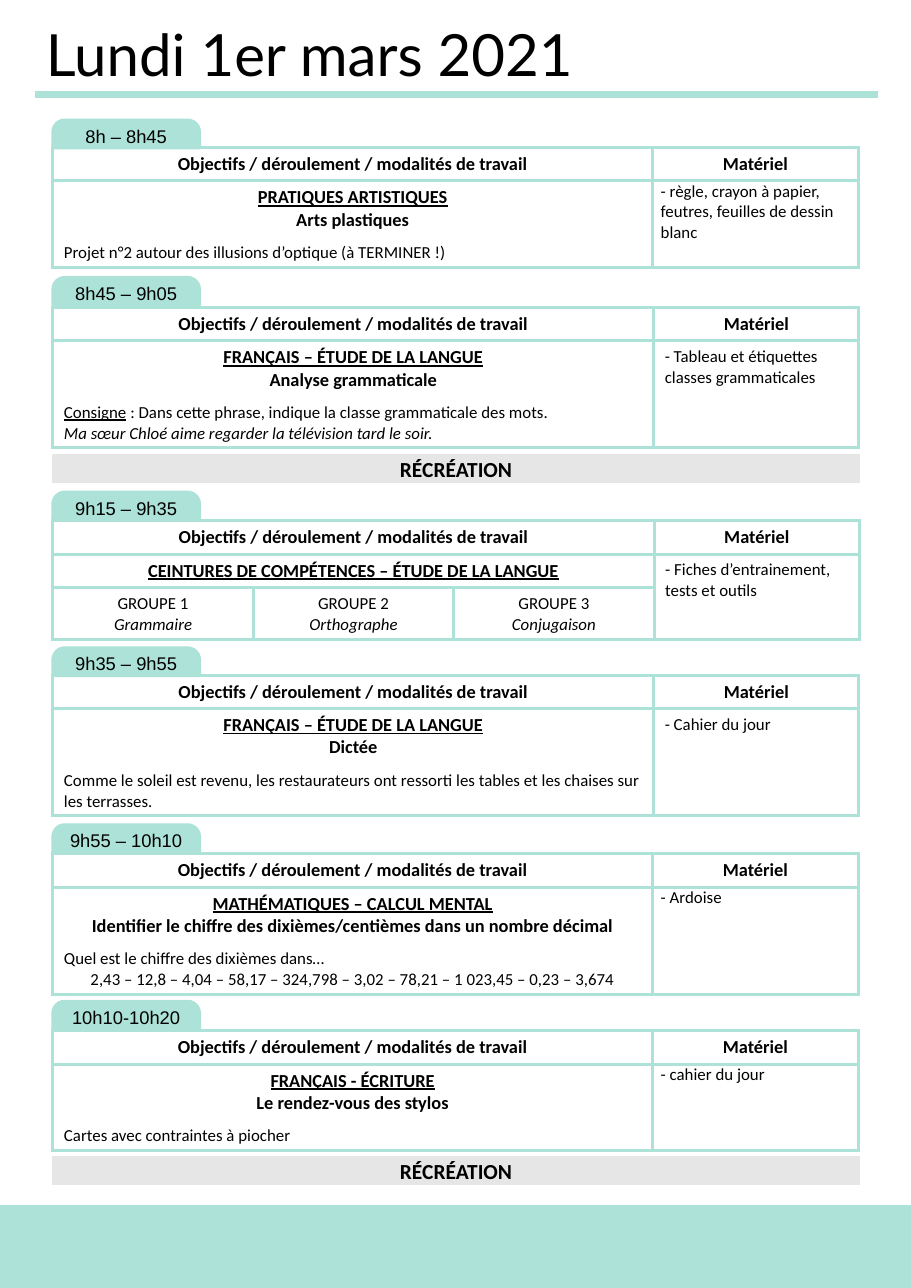
import collections
import pptx
import pptx.util
import pptx.oxml
import pptx.oxml.ns
import pptx.dml.color
import pptx.enum.shapes
import pptx.enum.text

Cm, Pt = pptx.util.Cm, pptx.util.Pt
SHAPE = pptx.enum.shapes.MSO_SHAPE
ANCHOR = pptx.enum.text.MSO_ANCHOR
ALIGN = pptx.enum.text.PP_ALIGN
COLORS = {"mint": "ACE2D7", "gray": "E7E6E6", "white": "FFFFFF", "black": "000000"}
LEFT, WIDTH = 1.22, 18.59
HEAD = 0.77

# marks: b bold, u underlined, i italic, c centred; tail is a plain second run
Line = collections.namedtuple("Line", "text marks size gap tail", defaults=("", 11, 0, ""))


def tint(name):
    return pptx.dml.color.RGBColor.from_string(COLORS[name])


class Page:
    def __init__(self, deck):
        self.font = "Calibri"
        self.slide = deck.slides.add_slide(deck.slide_layouts[6])
        self.shapes = self.slide.shapes

    def label(self, frame, lines, font=None):
        for index, line in enumerate(lines):
            para = frame.paragraphs[0] if index == 0 else frame.add_paragraph()
            para.text = line.text
            para.alignment = ALIGN.CENTER if "c" in line.marks else ALIGN.LEFT
            para.space_before = Pt(line.gap)
            if line.tail:
                para.add_run().text = line.tail
            for run, marks in zip(para.runs, (line.marks, "")):
                run.font.name = font or self.font
                run.font.size = Pt(line.size)
                run.font.color.rgb = tint("black")
                run.font.bold = "b" in marks
                run.font.italic = "i" in marks
                run.font.underline = "u" in marks

    def title(self, text):
        box = self.shapes.add_textbox(Cm(0.81), Cm(0.3), Cm(15.9), Cm(1.88))
        box.text_frame.word_wrap = True
        self.label(box.text_frame, [Line(text, size=38)], "Lato")

    def rule(self, start, end, top):
        line = self.shapes.add_connector(
            pptx.enum.shapes.MSO_CONNECTOR.STRAIGHT, Cm(start), Cm(top), Cm(end), Cm(top))
        line.line.color.rgb = tint("mint")
        line.line.width = Pt(4.75)
        props = line._element.spPr
        props.append(props.makeelement(pptx.oxml.ns.qn("a:effectLst"), {}))

    def block(self, kind, left, top, width, height, color, edge=1):
        shape = self.shapes.add_shape(kind, Cm(left), Cm(top), Cm(width), Cm(height))
        shape.shadow.inherit = False
        shape.fill.solid()
        shape.fill.fore_color.rgb = tint(color)
        shape.line.color.rgb = tint(color)
        shape.line.width = Pt(edge)
        shape.text_frame.vertical_anchor = ANCHOR.MIDDLE
        return shape

    def tab(self, top, hours):
        shape = self.block(SHAPE.ROUND_2_SAME_RECTANGLE, LEFT, top, 3.38, 0.64, "mint", 2)
        shape.adjustments[0] = 0.428
        shape.adjustments[1] = 0
        self.label(shape.text_frame, [Line(hours, "c", 12)], "Arial")

    def recess(self, top):
        shape = self.block(SHAPE.RECTANGLE, LEFT, top, WIDTH, 0.64, "gray")
        self.label(shape.text_frame, [Line("RÉCRÉATION", "bc", 14)])

    def grid(self, top, widths, heights):
        """Add a white table with mint borders and a header row."""
        frame = self.shapes.add_table(
            len(heights), len(widths), Cm(LEFT), Cm(top), Cm(sum(widths)), Cm(sum(heights)))
        table = frame.table
        table.first_row = table.horz_banding = False
        for column, width in zip(table.columns, widths):
            column.width = Cm(width)
        for row, height in zip(table.rows, heights):
            row.height = Cm(height)
        for cell in table.iter_cells():
            self.border(cell)
        last = len(widths) - 1
        if last > 1:
            table.cell(0, 0).merge(table.cell(0, last - 1))
        self.fill(table.cell(0, 0), [Line("Objectifs / déroulement / modalités de travail", "bc", 12)])
        self.fill(table.cell(0, last), [Line("Matériel", "bc", 12)])
        return table

    def border(self, cell):
        props = cell._tc.get_or_add_tcPr()
        for side in "LRTB":
            props.append(pptx.oxml.parse_xml(
                f'<a:ln{side} {pptx.oxml.ns.nsdecls("a")} w="{Pt(2.25)}"><a:solidFill>'
                f'<a:srgbClr val="{COLORS["mint"]}"/></a:solidFill></a:ln{side}>'))
        cell.fill.solid()
        cell.fill.fore_color.rgb = tint("white")

    def fill(self, cell, lines, anchor=ANCHOR.MIDDLE):
        cell.vertical_anchor = anchor
        self.label(cell.text_frame, lines)

    def lesson(self, top, height, subject, topic, details, needs, tight):
        """Add a lesson table; tight narrows the margins of the material cell."""
        widths = (13.82, 4.75) if tight else (13.85, 4.73)
        table = self.grid(top, widths, (HEAD, height))
        first, *rest = details
        lines = [Line(subject, "buc", 12), Line(topic, "bc", 12), first._replace(gap=7.3)]
        self.fill(table.cell(1, 0), lines + rest)
        cell = table.cell(1, 1)
        self.fill(cell, [Line(needs)], ANCHOR.TOP)
        if tight:
            cell.margin_left = cell.margin_right = Cm(0.19)
            cell.margin_top = cell.margin_bottom = 0

    def belts(self, top, subject, groups, needs):
        """Add the table of the skill groups."""
        table = self.grid(top, (4.62, 4.62, 4.62, 4.73), (HEAD, HEAD, 1.18))
        table.cell(1, 0).merge(table.cell(1, 2))
        table.cell(1, 3).merge(table.cell(2, 3))
        self.fill(table.cell(1, 0), [Line(subject, "buc", 12)], ANCHOR.TOP)
        self.fill(table.cell(1, 3), [Line(needs)], ANCHOR.TOP)
        for index, group in enumerate(groups):
            self.fill(table.cell(2, index), [Line(f"GROUPE {index + 1}", "c"), Line(group, "ic")])


LESSONS = [
    (3.4, 1.98, "PRATIQUES ARTISTIQUES", "Arts plastiques",
     [Line("Projet n°2 autour des illusions d’optique (à TERMINER !)")],
     "- règle, crayon à papier, feutres, feuilles de dessin blanc", True),
    (7.09, 2.46, "FRANÇAIS – ÉTUDE DE LA LANGUE", "Analyse grammaticale",
     [Line("Consigne", "u", tail=" : Dans cette phrase, indique la classe grammaticale des mots."),
      Line("Ma sœur Chloé aime regarder la télévision tard le soir.", "i")],
     "- Tableau et étiquettes classes grammaticales", False),
    (15.57, 2.46, "FRANÇAIS – ÉTUDE DE LA LANGUE", "Dictée",
     [Line("Comme le soleil est revenu, les restaurateurs ont ressorti les tables "
           "et les chaises sur les terrasses.")],
     "- Cahier du jour", False),
    (19.69, 2.46, "MATHÉMATIQUES – CALCUL MENTAL",
     "Identifier le chiffre des dixièmes/centièmes dans un nombre décimal",
     [Line("Quel est le chiffre des dixièmes dans…"),
      Line("2,43 – 12,8 – 4,04 – 58,17 – 324,798 – 3,02 – 78,21 – 1 023,45 – 0,23 – 3,674", "c")],
     "- Ardoise", True),
    (23.77, 1.98, "FRANÇAIS - ÉCRITURE", "Le rendez-vous des stylos",
     [Line("Cartes avec contraintes à piocher")], "- cahier du jour", True),
]
TABS = [(2.77, "8h – 8h45"), (6.4, "8h45 – 9h05"), (11.35, "9h15 – 9h35"),
        (14.94, "9h35 – 9h55"), (19.02, "9h55 – 10h10"), (23.09, "10h10-10h20")]


def main():
    deck = pptx.Presentation()
    deck.slide_width, deck.slide_height = Cm(21), Cm(29.7)
    page = Page(deck)
    page.title("Lundi 1er mars 2021")
    page.rule(0.81, 20.24, 2.18)
    for lesson in LESSONS:
        page.lesson(*lesson)
    page.belts(12.01, "CEINTURES DE COMPÉTENCES – ÉTUDE DE LA LANGUE",
               ("Grammaire", "Orthographe", "Conjugaison"),
               "- Fiches d’entrainement, tests et outils")
    for top, hours in TABS:
        page.tab(top, hours)
    for top in (10.49, 26.67):
        page.recess(top)
    page.block(SHAPE.RECTANGLE, 0, 27.81, 21, 1.88, "mint")
    deck.save("out.pptx")


if __name__ == "__main__":
    main()
